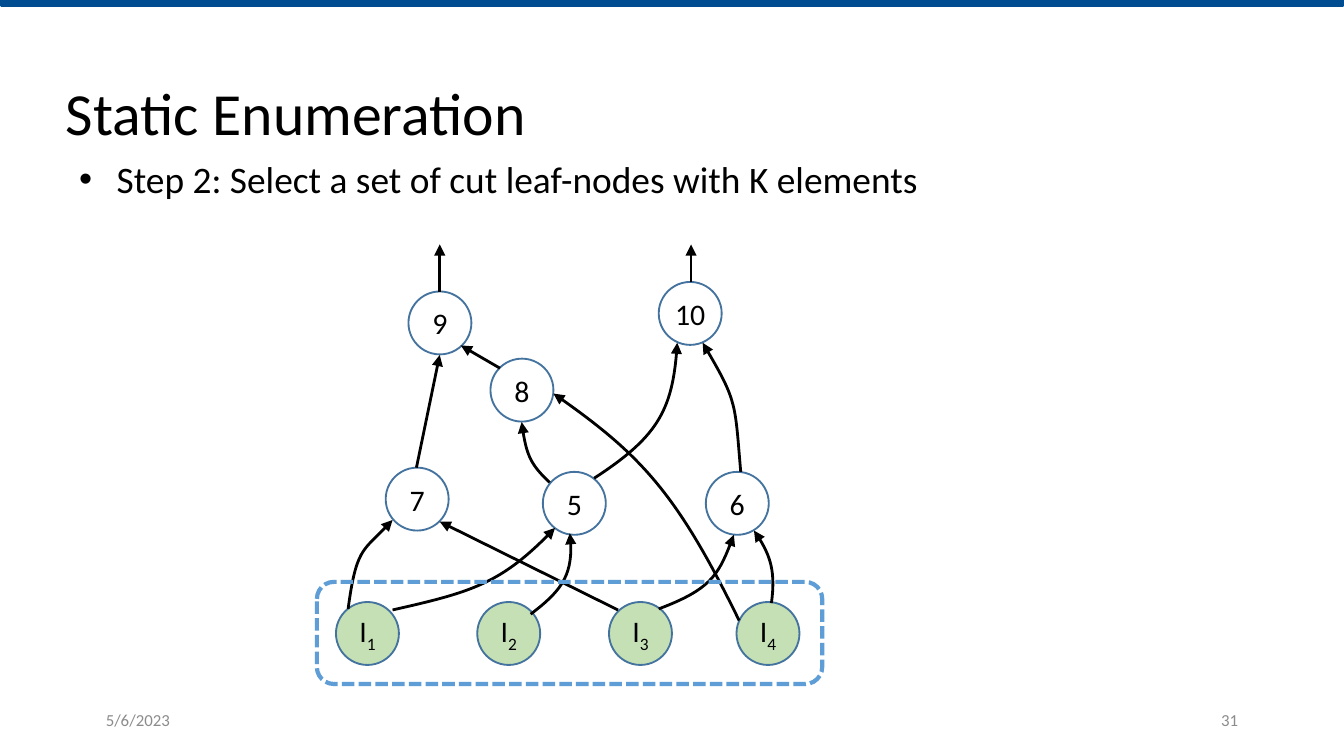
from lxml import etree
from pptx import Presentation
from pptx.dml.color import RGBColor
from pptx.enum import dml, shapes, text
from pptx.oxml.ns import qn
from pptx.util import Cm, Pt

BLACK = RGBColor(0x00, 0x00, 0x00)
WHITE = RGBColor(0xFF, 0xFF, 0xFF)
GRAY = RGBColor(0x8C, 0x8C, 0x8C)
NAVY = RGBColor(0x00, 0x4C, 0x90)
GREEN = RGBColor(0xC5, 0xE0, 0xB4)
OUTLINE = RGBColor(0x43, 0x73, 0x9E)
DASH_BLUE = RGBColor(0x5E, 0x9D, 0xD6)
NODE = Cm(1.19)


def style_text(p, size, color, align):
    p.alignment = align
    for r in p.runs:
        r.font.name = "Calibri"
        r.font.size = Pt(size)
        r.font.color.rgb = color


def style_arrow(sp):
    sp.line.color.rgb = BLACK
    sp.line.width = Pt(1.5)
    spPr = sp._element.spPr
    etree.SubElement(spPr.find(qn("a:ln")), qn("a:tailEnd"), type="triangle")
    etree.SubElement(spPr, qn("a:effectLst"))


prs = Presentation()
prs.slide_width, prs.slide_height = Cm(25.4), Cm(14.29)
s = prs.slides.add_slide(prs.slide_layouts[1])

bar = s.shapes.add_shape(shapes.MSO_SHAPE.SNIP_2_SAME_RECTANGLE, 0, 0, prs.slide_width, Cm(0.13))
bar.rotation = 180
bar.shadow.inherit = False
bar.fill.solid()
bar.fill.fore_color.rgb = NAVY
bar.line.fill.background()

title, body = s.shapes.title, s.placeholders[1]
for sp, box, words, size, anchor in [
    (title, (0.99, 1.63, 15.09, 1.14), "Static Enumeration", 32, text.MSO_ANCHOR.MIDDLE),
    (body, (1.24, 2.92, 21.77, 1.96),
     "Step 2: Select a set of cut leaf-nodes with K elements", 20, text.MSO_ANCHOR.TOP),
]:
    sp.left, sp.top, sp.width, sp.height = map(Cm, box)
    tf = sp.text_frame
    tf.text = words
    tf.auto_size = text.MSO_AUTO_SIZE.NONE
    tf.vertical_anchor = anchor
    p = tf.paragraphs[0]
    p.line_spacing = 0.9
    p.space_before = Pt(0)
    style_text(p, size, BLACK, text.PP_ALIGN.LEFT)
pPr = body.text_frame.paragraphs[0]._p.get_or_add_pPr()
pPr.set("marL", str(Cm(0.71)))
pPr.set("indent", str(-Cm(0.71)))

for left, words, align in [
    (1.75, "5/6/2023", text.PP_ALIGN.LEFT),
    (17.93, "31", text.PP_ALIGN.RIGHT),
]:
    tf = s.shapes.add_textbox(Cm(left), Cm(13.23), Cm(5.72), Cm(0.76)).text_frame
    tf.word_wrap = True
    tf.vertical_anchor = text.MSO_ANCHOR.MIDDLE
    tf.text = words
    style_text(tf.paragraphs[0], 9, GRAY, align)

nodes = [
    ("I", "1", 6.35, 11.38), ("I", "2", 9.02, 11.38),
    ("I", "3", 11.51, 11.38), ("I", "4", 13.92, 11.38),
    ("5", "", 10.26, 8.92), ("7", "", 7.29, 8.84), ("6", "", 13.34, 8.92),
    ("8", "", 9.27, 6.78), ("9", "", 7.72, 5.51), ("10", "", 12.45, 5.33),
]
for label, sub, left, top in nodes:
    sp = s.shapes.add_shape(shapes.MSO_SHAPE.OVAL, Cm(left), Cm(top), NODE, NODE)
    sp.shadow.inherit = False
    sp.fill.solid()
    sp.fill.fore_color.rgb = GREEN if sub else WHITE
    sp.line.color.rgb = OUTLINE
    sp.line.width = Pt(1)
    tf = sp.text_frame
    tf.word_wrap = False
    tf.vertical_anchor = text.MSO_ANCHOR.MIDDLE
    tf.text = label
    p = tf.paragraphs[0]
    if sub:
        r = p.add_run()
        r.text = sub
        r.font._element.set("baseline", "-25000")
    style_text(p, 16, BLACK, text.PP_ALIGN.CENTER)

straight_edges = [
    (11.68, 11.53, 8.31, 9.86),
    (7.87, 8.84, 8.31, 6.71),
    (9.45, 6.96, 8.71, 6.53),
    (8.31, 5.51, 8.31, 4.62),
    (13.06, 5.33, 13.06, 4.62),
]
for edge in straight_edges:
    style_arrow(s.shapes.add_connector(shapes.MSO_CONNECTOR.STRAIGHT, *map(Cm, edge)))

curved_edges = [
    [(6.58, 11.51), (6.73, 10.39), (6.88, 10.41), (7.42, 9.83)],
    [(13.97, 11.73), (12.83, 9.4), (12.12, 8.59), (10.46, 7.44)],
    [(10.03, 11.61), (10.57, 11.2), (10.87, 10.85), (10.77, 10.08)],
    [(7.42, 11.53), (8.89, 11.2), (9.5, 11.02), (10.49, 9.98)],
    [(12.45, 11.51), (13.41, 11.15), (13.61, 10.82), (13.87, 10.11)],
    [(10.39, 9.12), (10.03, 8.79), (9.93, 8.53), (9.86, 7.98)],
    [(14, 8.92), (13.89, 7.65), (13.94, 7.59), (13.28, 6.48)],
    [(11.23, 9.04), (12.4, 8.28), (12.73, 7.72), (12.8, 6.48)],
    [(14.58, 11.4), (14.66, 10.82), (14.53, 10.41), (14.25, 10.03)],
]
for edge in curved_edges:
    pts = [(Cm(x), Cm(y)) for x, y in edge]
    fb = s.shapes.build_freeform(*pts[0])
    fb.add_line_segments([pts[-1]], close=False)
    sp = fb.convert_to_shape()
    line = next(sp._element.iter(qn("a:lnTo")))
    curve = etree.Element(qn("a:cubicBezTo"))
    for x, y in pts[1:]:
        etree.SubElement(curve, qn("a:pt"), x=str(x - sp.left), y=str(y - sp.top))
    line.getparent().replace(line, curve)
    sp.fill.background()
    style_arrow(sp)

cut = s.shapes.add_shape(shapes.MSO_SHAPE.ROUNDED_RECTANGLE, Cm(5.99), Cm(11), Cm(9.55), Cm(1.93))
cut.shadow.inherit = False
cut.fill.background()
cut.line.color.rgb = DASH_BLUE
cut.line.width = Pt(2.25)
cut.line.dash_style = dml.MSO_LINE.SQUARE_DOT

prs.save("out.pptx")
